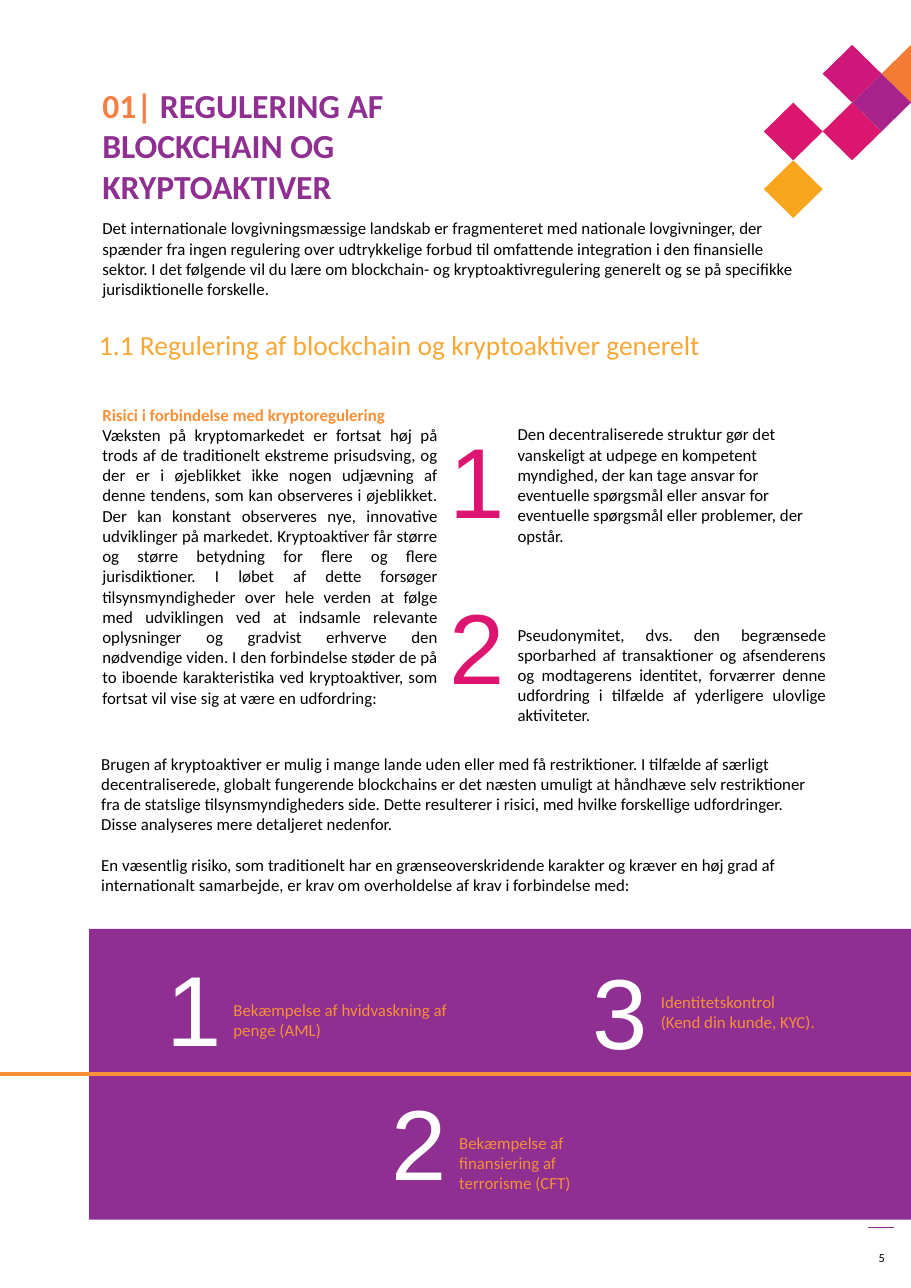
"""Builds the handbook page about regulation of blockchain and crypto-assets."""
from lxml.etree import SubElement
from pptx import Presentation
from pptx.dml.color import RGBColor
from pptx.enum.shapes import MSO_CONNECTOR, MSO_SHAPE
from pptx.enum.text import MSO_ANCHOR, PP_ALIGN
from pptx.oxml.ns import qn
from pptx.util import Inches, Pt

BLACK = RGBColor(0x00, 0x00, 0x00)
WHITE = RGBColor(0xFF, 0xFF, 0xFF)
PURPLE = RGBColor(0x8E, 0x2F, 0x91)
ORANGE = RGBColor(0xF7, 0x90, 0x37)
CORAL = RGBColor(0xF4, 0x80, 0x43)
AMBER = RGBColor(0xF9, 0xA8, 0x35)
PINK = RGBColor(0xDD, 0x14, 0x70)
TILE_ORANGE = RGBColor(0xF4, 0x7B, 0x34)
TILE_YELLOW = RGBColor(0xF9, 0xA6, 0x1F)
TILE_PINK = RGBColor(0xDB, 0x16, 0x6E)
TILE_VIOLET = RGBColor(0xA7, 0x22, 0x8B)
TILE_MAGENTA = RGBColor(0xCF, 0x16, 0x7B)

LEFT, BODY_WIDTH = 10.04, 79.81
TILE_LEFT, TILE_TOP, TILE_WIDTH, TILE_HEIGHT = 87.08, 5.73, 3.23, 2.24


def add_span(para, text, size=11, font="Calibri", color=BLACK, bold=False):
    span = para.add_run()
    span.text = text
    span.font.size = Pt(size)
    span.font.name = font
    span.font.bold = bold
    span.font.color.rgb = color


class Page:
    """Places elements on one slide, measured in percent of its width and height."""

    def __init__(self, deck):
        self.width, self.height = deck.slide_width, deck.slide_height
        self.shapes = deck.slides.add_slide(deck.slide_layouts[6]).shapes

    def across(self, share):
        return round(self.width * share / 100)

    def down(self, share):
        return round(self.height * share / 100)

    def frame(self, left, top, width, height):
        return self.across(left), self.down(top), self.across(width), self.down(height)

    def text(self, area, paras, align=PP_ALIGN.LEFT, gap=0, anchor=MSO_ANCHOR.TOP):
        """Adds a text box; each paragraph is a list of (text, format) spans."""
        box = self.shapes.add_textbox(*self.frame(*area))
        box.text_frame.word_wrap = True
        box.text_frame.vertical_anchor = anchor
        for index, spans in enumerate(paras):
            para = box.text_frame.paragraphs[0] if index == 0 else box.text_frame.add_paragraph()
            para.alignment = align
            if index and gap:
                para.space_before = Pt(gap)
            for text, style in spans:
                add_span(para, text, **style)
        return box

    def numeral(self, digit, left, top, color):
        style = {"size": 65, "font": "Arial", "color": color}
        self.text((left, top, 8.71, 10.18), [[(digit, style)]])

    def fill(self, shape, color):
        shape.shadow.inherit = False
        shape.fill.solid()
        shape.fill.fore_color.rgb = color
        shape.line.fill.background()
        return shape

    def panel(self, area, color):
        return self.fill(self.shapes.add_shape(MSO_SHAPE.RECTANGLE, *self.frame(*area)), color)

    def tile(self, column, row, color):
        """Adds a diamond, cut off at the right edge of the page."""
        x, y = TILE_LEFT + column * TILE_WIDTH, TILE_TOP + row * TILE_HEIGHT
        corners = [(x, y - TILE_HEIGHT), (x + TILE_WIDTH, y),
                   (x, y + TILE_HEIGHT), (x - TILE_WIDTH, y)]
        points = [(self.across(a), self.down(b)) for a, b in corners if a <= 100]
        builder = self.shapes.build_freeform(*points[0])
        builder.add_line_segments(points[1:], close=True)
        self.fill(builder.convert_to_shape(), color)

    def line(self, start, end, top, color, weight):
        line = self.shapes.add_connector(
            MSO_CONNECTOR.STRAIGHT, self.across(start), self.down(top),
            self.across(end), self.down(top))
        line.line.color.rgb = color
        line.line.width = Pt(weight)
        SubElement(line._element.spPr, qn("a:effectLst"))
        return line


def main():
    deck = Presentation()
    deck.slide_width, deck.slide_height = Inches(8.27), Inches(11.69)
    page = Page(deck)

    page.line(98.19, 95.28, 95.3, PURPLE, 0.75)
    for column, row, color in [
        (4, 0, TILE_ORANGE), (0, 4, TILE_YELLOW), (0, 2, TILE_PINK),
        (2, 2, TILE_PINK), (3, 1, TILE_VIOLET), (2, 0, TILE_MAGENTA),
    ]:
        page.tile(column, row, color)

    page.text((LEFT, 6.16, 52.48, 11.29), [[
        ("01| ", {"size": 22, "color": CORAL, "bold": True}),
        ("REGULERING AF BLOCKCHAIN OG KRYPTOAKTIVER",
         {"size": 22, "color": PURPLE, "bold": True}),
    ]])
    page.text((94.32, 95.47, 4.96, 4.36), [[("5", {"size": 8})]],
              align=PP_ALIGN.CENTER, anchor=MSO_ANCHOR.MIDDLE)
    page.text((LEFT, 16.51, BODY_WIDTH, 5.22), [[(
        "Det internationale lovgivningsmæssige landskab er fragmenteret med nationale "
        "lovgivninger, der spænder fra ingen regulering over udtrykkelige forbud til "
        "omfattende integration i den finansielle sektor. I det følgende vil du lære om "
        "blockchain- og kryptoaktivregulering generelt og se på specifikke "
        "jurisdiktionelle forskelle.", {})]])
    page.text((9.67, 25.06, 80.05, 4.45), [[
        ("1.1 Regulering af blockchain og kryptoaktiver generelt",
         {"size": 18, "color": AMBER})]])

    risks = page.text((LEFT, 30.97, BODY_WIDTH, 26.52), [
        [("Risici i forbindelse med kryptoregulering", {"color": ORANGE, "bold": True})],
        [("Væksten på kryptomarkedet er fortsat høj på trods af de traditionelt ekstreme "
          "prisudsving, og der er i øjeblikket ikke nogen udjævning af denne tendens, som "
          "kan observeres i øjeblikket. Der kan konstant observeres nye, innovative "
          "udviklinger på markedet. Kryptoaktiver får større og større betydning for flere "
          "og flere jurisdiktioner. I løbet af dette forsøger tilsynsmyndigheder over hele "
          "verden at følge med udviklingen ved at indsamle relevante oplysninger og "
          "gradvist erhverve den nødvendige viden. I den forbindelse støder de på to "
          "iboende karakteristika ved kryptoaktiver, som fortsat vil vise sig at være en "
          "udfordring:", {})],
    ], align=PP_ALIGN.JUSTIFY)
    columns = risks.text_frame._txBody.bodyPr
    columns.set("numCol", "2")
    columns.set("spcCol", str(Inches(0.31)))

    challenges = page.text((55.62, 32.51, 36.28, 18.99), [
        [("Den decentraliserede struktur gør det vanskeligt at udpege en kompetent "
          "myndighed, der kan tage ansvar for eventuelle spørgsmål eller ansvar for "
          "eventuelle spørgsmål eller problemer, der opstår.", {})],
        [("Pseudonymitet, dvs. den begrænsede sporbarhed af transaktioner og afsenderens "
          "og modtagerens identitet, forværrer denne udfordring i tilfælde af yderligere "
          "ulovlige aktiviteter.", {})],
    ], gap=51.5)
    challenges.text_frame.paragraphs[1].alignment = PP_ALIGN.JUSTIFY
    page.numeral("1", 48.13, 32.08, PINK)
    page.numeral("2", 48.13, 45, PINK)

    page.text((9.92, 58.08, BODY_WIDTH, 11.5), [
        [("Brugen af kryptoaktiver er mulig i mange lande uden eller med få restriktioner. "
          "I tilfælde af særligt decentraliserede, globalt fungerende blockchains er det "
          "næsten umuligt at håndhæve selv restriktioner fra de statslige "
          "tilsynsmyndigheders side. Dette resulterer i risici, med hvilke forskellige "
          "udfordringer. Disse analyseres mere detaljeret nedenfor.", {})],
        [("En væsentlig risiko, som traditionelt har en grænseoverskridende karakter og "
          "kræver en høj grad af internationalt samarbejde, er krav om overholdelse af "
          "krav i forbindelse med:", {})],
    ], gap=13.4)

    panel = page.panel((9.79, 72.11, 90.21, 22.58), PURPLE)
    page.line(0, 100, 83.4, ORANGE, 3).end_connect(panel, 3)
    for digit, digit_left, digit_top, area, lines in [
        ("1", 17.05, 73.14, (24.43, 77.16, 26, 2.48),
         ["Bekæmpelse af hvidvaskning af penge (AML)"]),
        ("2", 41.84, 83.49, (49.21, 87.51, 21.16, 2.48),
         ["Bekæmpelse af finansiering af terrorisme (CFT)"]),
        ("3", 63.85, 73.31, (71.34, 76.56, 24.91, 2.48),
         ["Identitetskontrol", "(Kend din kunde, KYC)."]),
    ]:
        page.text(area, [[(text, {"color": ORANGE})] for text in lines])
        page.numeral(digit, digit_left, digit_top, WHITE)

    deck.save("out.pptx")


if __name__ == "__main__":
    main()
